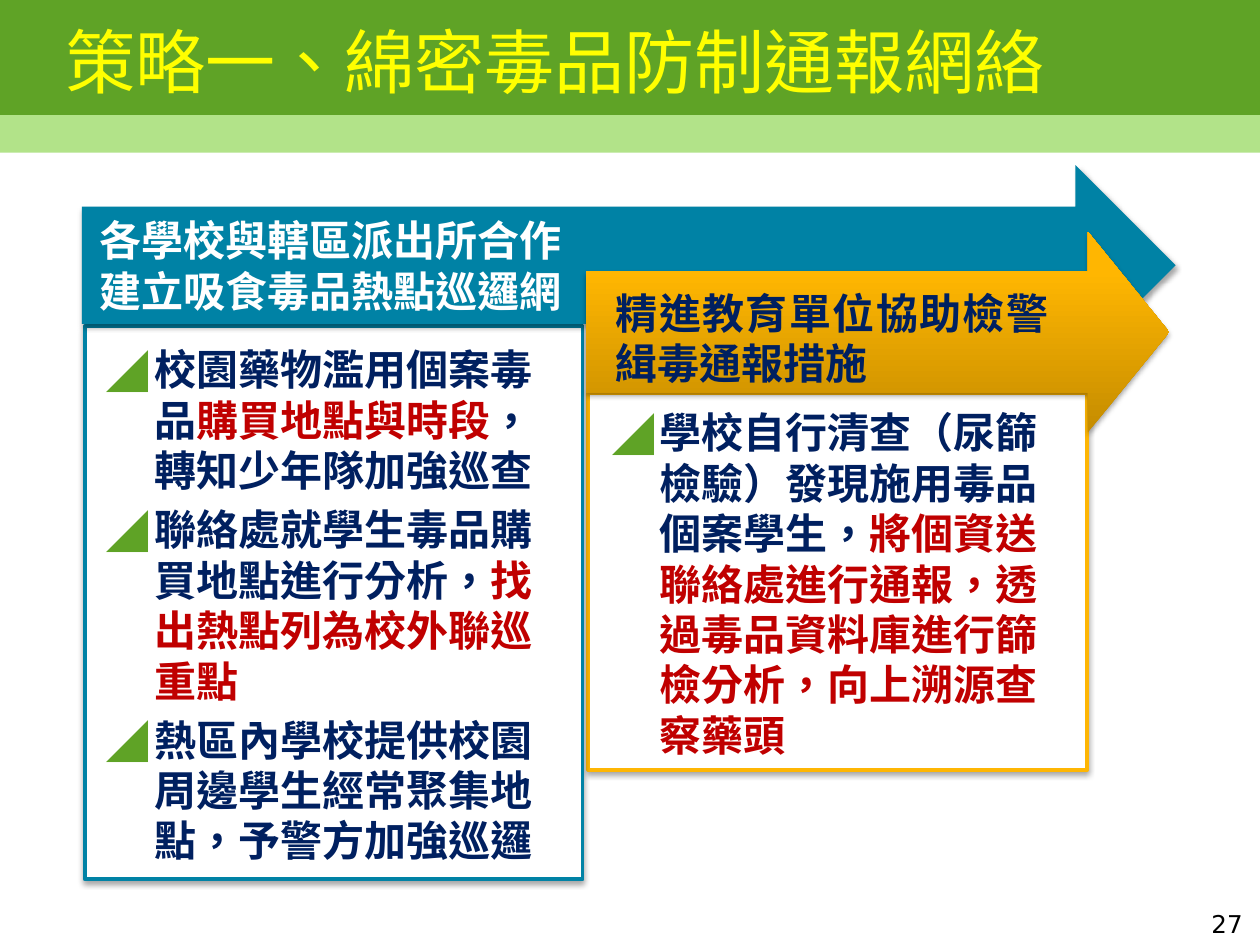
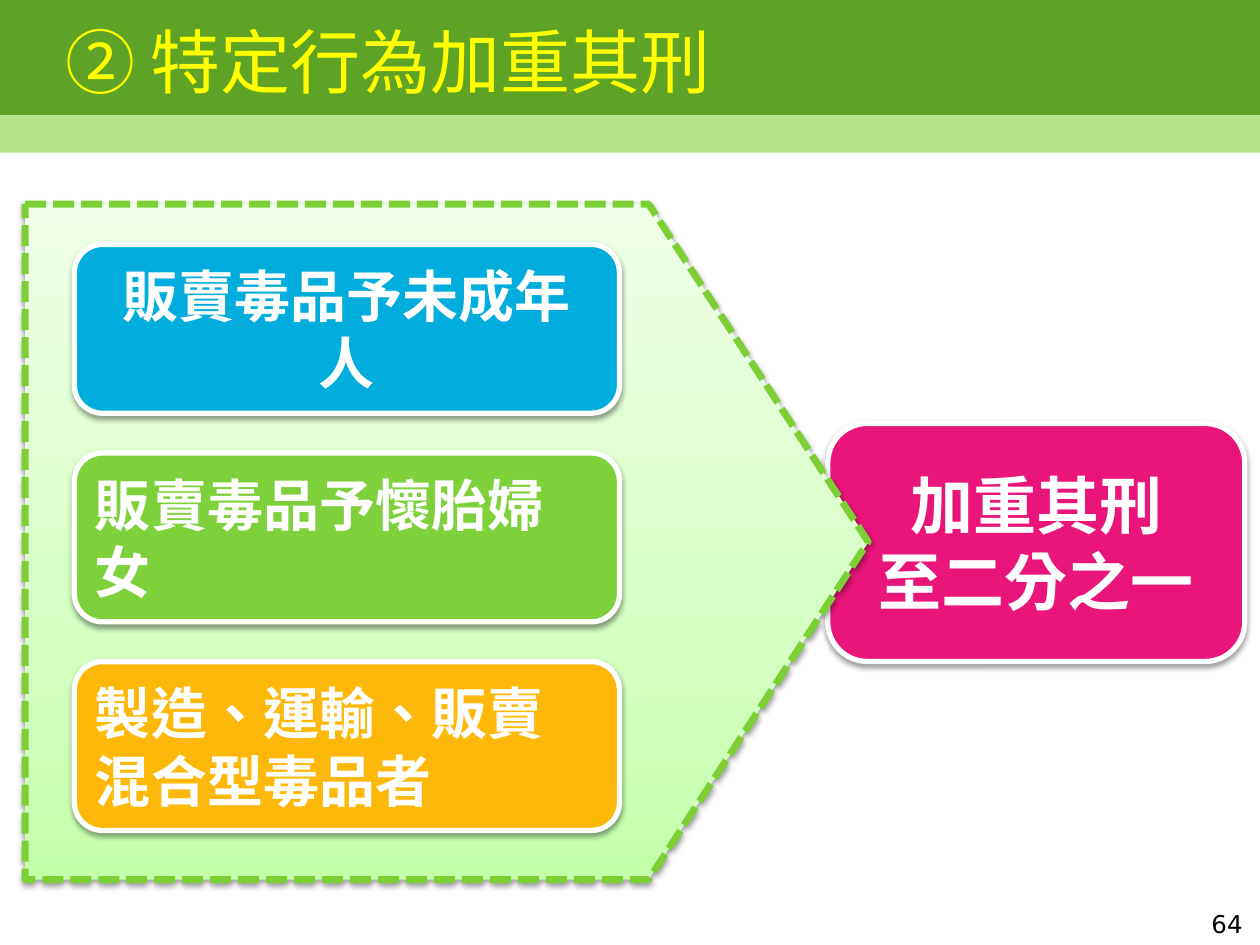
from lxml import etree
from pptx import Presentation
from pptx import util as u
from pptx.dml.color import RGBColor
from pptx.enum import dml, shapes, text
from pptx.oxml import ns

WHITE, NAVY, RED = "FFFFFF", "002060", "C00000"
GREEN, PALE_GREEN, YELLOW = "5FA326", "B2E389", "FFFF00"
TEAL, AMBER = "0082A5", "FEB604"
CJK = "Noto Sans CJK SC"
KIND, ALIGN, ANCHOR = shapes.MSO_SHAPE, text.PP_ALIGN, text.MSO_ANCHOR


def color(hex_value):
    return RGBColor.from_string(hex_value)


def child(parent, tag, **attributes):
    return etree.SubElement(parent, ns.qn(tag), attributes)


def place(area):
    return [u.Pt(length) for length in area]


def paint(shape, fill):
    if isinstance(fill, str):
        shape.fill.solid()
        shape.fill.fore_color.rgb = color(fill)
        return
    shape.fill.gradient()
    shape.fill.gradient_angle = 90
    stops = shape._element.spPr.find(".//" + ns.qn("a:gsLst"))
    for stop in list(stops):
        stops.remove(stop)
    for position, tone in fill:
        stop = child(stops, "a:gs", pos=str(position * 1000))
        child(stop, "a:srgbClr", val=tone)


def add_block(page, kind, area, fill, line=None, width=0, adjust=(), shadow=35):
    block = page.shapes.add_shape(kind, *place(area))
    for index, value in enumerate(adjust):
        block.adjustments[index] = value
    paint(block, fill)
    if line:
        block.line.color.rgb = color(line)
        block.line.width = u.Pt(width)
    else:
        block.line.fill.background()
    block.shadow.inherit = False
    if shadow:
        effects = block._element.spPr.find(ns.qn("a:effectLst"))
        outer = child(effects, "a:outerShdw", blurRad=str(u.Pt(3.1)),
                      dist=str(u.Pt(1.8)), dir="5400000", rotWithShape="0")
        tone = child(outer, "a:srgbClr", val="000000")
        child(tone, "a:alpha", val=str(shadow * 1000))
    return block


def add_text_box(page, area, anchor=ANCHOR.TOP, insets=None):
    box = page.shapes.add_textbox(*place(area))
    frame = box.text_frame
    frame.word_wrap = True
    frame.vertical_anchor = anchor
    if insets:
        (frame.margin_left, frame.margin_top,
         frame.margin_right, frame.margin_bottom) = place(insets)
    return box


def add_span(para, words, size, tone, font=CJK, bold=True):
    span = para.add_run()
    span.text = words
    span.font.size = u.Pt(size)
    span.font.bold = bold
    span.font.name = font
    span.font.color.rgb = color(tone)
    properties = span._r.get_or_add_rPr()
    properties.set("lang", "zh-TW")
    child(properties, "a:ea", typeface=CJK)


def write(box, paragraphs, size, tone, align=ALIGN.LEFT, indent=0):
    frame = box.text_frame
    for index, words in enumerate(paragraphs):
        para = frame.add_paragraph() if index else frame.paragraphs[0]
        para.alignment = align
        para.line_spacing = u.Pt(size * 1.2)
        if indent:
            para._p.get_or_add_pPr().set("marL", str(u.Pt(indent)))
        add_span(para, words, size, tone)


def add_bullets(page, area, items):
    frame = add_text_box(page, area).text_frame
    for index, spans in enumerate(items):
        para = frame.add_paragraph() if index else frame.paragraphs[0]
        para.line_spacing = u.Pt(28.8)
        para.space_before = u.Pt(5)
        properties = para._p.get_or_add_pPr()
        properties.set("marL", str(u.Pt(27)))
        properties.set("indent", str(u.Pt(-27)))
        child(child(properties, "a:buClr"), "a:srgbClr", val=GREEN)
        child(properties, "a:buFont", typeface=CJK)
        child(properties, "a:buChar", char="◢")
        for words, tone in spans:
            add_span(para, words, 24, tone, font="Arial")


def add_page(deck, title, number):
    page = deck.slides.add_slide(deck.slide_layouts[6])
    add_block(page, KIND.RECTANGLE, (0, 62.5, 720, 24.7), PALE_GREEN, shadow=0)
    add_block(page, KIND.RECTANGLE, (0, 0, 720, 65.7), GREEN, shadow=0)
    heading = add_text_box(page, (30.2, 12.2, 664.6, 44.6), ANCHOR.MIDDLE)
    para = heading.text_frame.paragraphs[0]
    para.line_spacing = u.Pt(48)
    add_span(para, title, 40, YELLOW, "Arial", False)
    footer = add_text_box(page, (549.4, 516.2, 167.8, 18.7))
    para = footer.text_frame.paragraphs[0]
    para.alignment = ALIGN.RIGHT
    add_span(para, number, 14, "000000", "DejaVu Sans", False)
    return page


def build_reporting_network(deck):
    page = add_page(deck, "策略一、綿密毒品防制通報網絡", "27")
    add_block(page, KIND.RECTANGLE, (336.2, 224.6, 285.1, 215.3), WHITE, AMBER, 2.25)
    add_block(page, KIND.RECTANGLE, (48.5, 186.5, 284.4, 316), WHITE, TEAL, 2.25)

    add_block(page, KIND.RIGHT_ARROW, (46.8, 94.3, 625, 114.5), TEAL,
              adjust=(0.585, 0.5))
    patrol = add_text_box(page, (49, 131, 328.3, 49.7), ANCHOR.MIDDLE,
                          (5, 5, 20, 13.7))
    write(patrol, ["各學校與轄區派出所合作", "建立吸食毒品熱點巡邏網"],
          24, WHITE, ALIGN.JUSTIFY, 2.9)

    add_block(page, KIND.RIGHT_ARROW, (334.8, 132.5, 333.4, 114.5),
              [(0, "C58C00"), (80, "FFB601"), (100, "FFB602")],
              adjust=(0.605, 0.406))
    reporting = add_text_box(page, (342, 160.6, 264.2, 64))
    write(reporting, ["精進教育單位協助檢警緝毒通報措施"], 24, NAVY, ALIGN.JUSTIFY, 2.9)

    add_bullets(page, (54, 193, 271.4, 309.6), [
        [("校園藥物濫用個案毒品", NAVY), ("購買地點與時段", RED),
         ("，轉知少年隊加強巡查", NAVY)],
        [("聯絡處就學生毒品購買地點進行分析，", NAVY),
         ("找出熱點列為校外聯巡重點", RED)],
        [("熱區內學校提供校園周邊學生經常聚集地點，予警方加強巡邏", NAVY)],
    ])
    add_bullets(page, (342.7, 229, 277.9, 211), [
        [("學校自行清查（尿篩檢驗）發現施用毒品個案學生，", NAVY),
         ("將個資送聯絡處進行通報，透過毒品資料庫進行篩檢分析，向上溯源查察藥頭", RED)],
    ])


def add_card(page, area, fill, paragraphs, size, align):
    card = add_block(page, KIND.ROUNDED_RECTANGLE, area, fill, WHITE, 3, shadow=38)
    card.text_frame.word_wrap = True
    card.text_frame.vertical_anchor = ANCHOR.MIDDLE
    write(card, paragraphs, size, WHITE, align)


def build_heavier_penalty(deck):
    page = add_page(deck, "② 特定行為加重其刑", "64")
    add_card(page, (473, 242, 238.3, 136), "EA157A",
             ["加重其刑", "至二分之一"], 36, ALIGN.CENTER)
    pentagon = add_block(page, KIND.PENTAGON, (14.4, 116.6, 481.7, 386),
                         [(0, "C4FFAA"), (35, "D5FFC3"), (100, "EFFFE8")],
                         "7CD036", 4, (0.325,), 38)
    pentagon.line.dash_style = dml.MSO_LINE.SQUARE_DOT
    offences = [
        ("販賣毒品予未成年人", "00ADDC", ALIGN.CENTER),
        ("販賣毒品予懷胎婦女", "7FD13B", ALIGN.LEFT),
        ("製造、運輸、販賣混合型毒品者", "FEB80A", ALIGN.LEFT),
    ]
    for index, (words, fill, align) in enumerate(offences):
        add_card(page, (42.5, 139.7 + 119.2 * index, 311.5, 96.5),
                 fill, [words], 32, align)


def main():
    deck = Presentation()
    deck.slide_width, deck.slide_height = u.Pt(720), u.Pt(540)
    build_reporting_network(deck)
    build_heavier_penalty(deck)
    deck.save("out.pptx")


if __name__ == "__main__":
    main()
